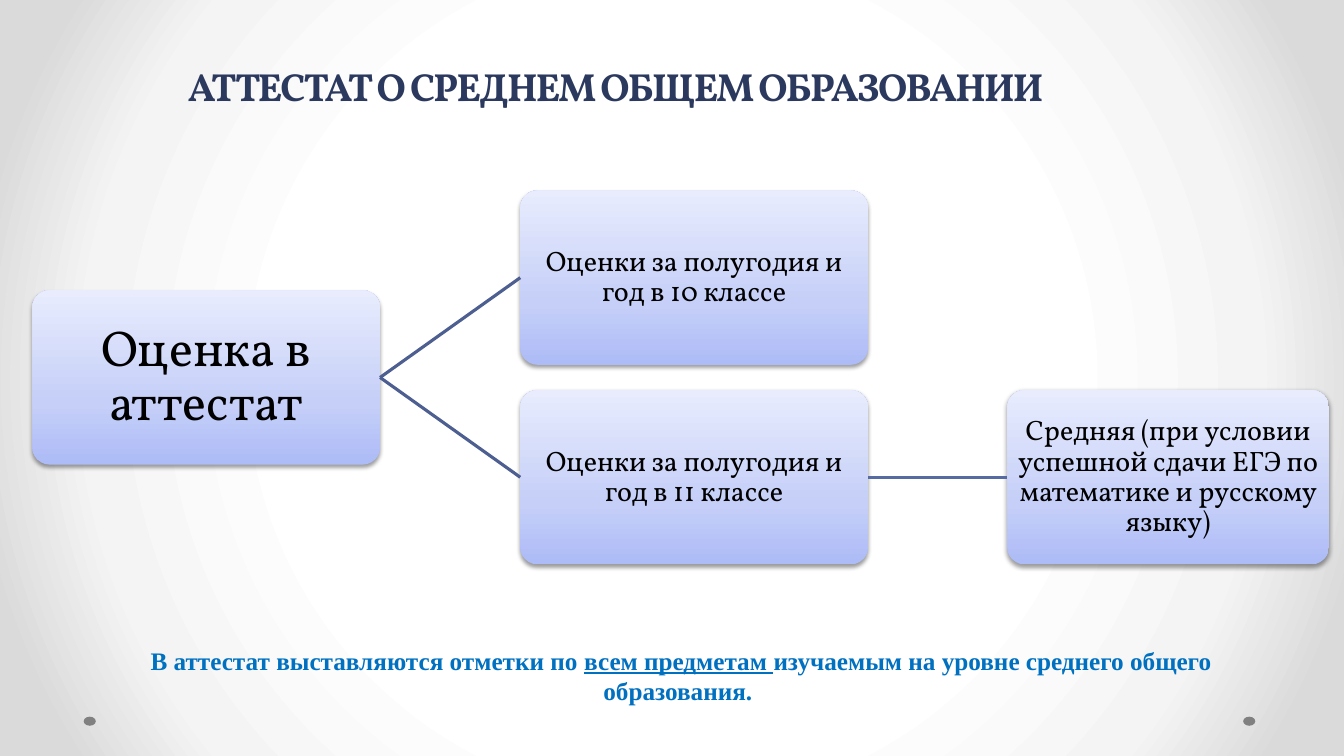
import pptx
import pptx.dml.color
import pptx.enum.shapes
import pptx.enum.text
import pptx.oxml
import pptx.oxml.ns
import pptx.util
from lxml import etree

Inches, Pt = pptx.util.Inches, pptx.util.Pt
RGBColor = pptx.dml.color.RGBColor
MSO_SHAPE = pptx.enum.shapes.MSO_SHAPE
CENTER = pptx.enum.text.PP_ALIGN.CENTER
qn = pptx.oxml.ns.qn

NAVY = RGBColor(0x2C, 0x39, 0x5E)
BLUE = RGBColor(0x00, 0x70, 0xC0)
BLACK = RGBColor(0, 0, 0)
GRAY = RGBColor(0x80, 0x80, 0x80)
BRANCH_LINE = RGBColor(0x4D, 0x5E, 0x90)
RESULT_LINE = RGBColor(0x57, 0x6B, 0xA3)
PAGE_STOPS = [(50, RGBColor(0xFF, 0xFF, 0xFF)), (76, RGBColor(0xF4, 0xF4, 0xF4)),
              (92, RGBColor(0xDA, 0xDA, 0xDA))]
BOX_STOPS = [(0, RGBColor(0xAD, 0xBB, 0xF6)), (35, RGBColor(0xC5, 0xCF, 0xF8)),
             (100, RGBColor(0xE8, 0xEC, 0xFD))]
NS = 'xmlns:a="http://schemas.openxmlformats.org/drawingml/2006/main"'
UPWARD = '<a:lin ang="16200000" scaled="0"/>'
RADIAL = '<a:path path="circle"><a:fillToRect l="50000" t="50000" r="50000" b="50000"/></a:path>'
SHADOW = (f'<a:outerShdw {NS} blurRad="40000" dist="20000" dir="5400000" rotWithShape="0">'
          '<a:srgbClr val="000000"><a:alpha val="38000"/></a:srgbClr></a:outerShdw>')


def set_gradient(fill, owner, stops, direction):
    """Give the fill found inside the owner element these stops and direction."""
    fill.gradient()
    default = next(owner.iter(qn("a:gradFill")))
    marks = "".join(f'<a:gs pos="{pos * 1000}"><a:srgbClr val="{color}"/></a:gs>'
                    for pos, color in stops)
    default.getparent().replace(default, pptx.oxml.parse_xml(
        f'<a:gradFill {NS} rotWithShape="1"><a:gsLst>{marks}</a:gsLst>{direction}</a:gradFill>'))


def style(font, name, size, color, bold=False):
    font.name, font.size, font.bold = name, Pt(size), bold
    font.color.rgb = color


deck = pptx.Presentation()
deck.slide_width, deck.slide_height = Inches(13.33), Inches(7.5)
page = deck.slides.add_slide(deck.slide_layouts[6])
set_gradient(page.background.fill, page.element, PAGE_STOPS, RADIAL)

for left in (0.83, 12.33):
    dot = page.shapes.add_shape(MSO_SHAPE.OVAL, Inches(left), Inches(7.11),
                                Inches(0.12), Inches(0.09))
    dot.shadow.inherit = False
    dot.fill.solid()
    dot.fill.fore_color.rgb = GRAY
    dot.line.fill.background()

# Title
title = page.shapes.add_textbox(Inches(1.04), Inches(0.25), Inches(10.13), Inches(0.88))
title.text_frame.word_wrap = True
title.text_frame.vertical_anchor = pptx.enum.text.MSO_ANCHOR.BOTTOM
para = title.text_frame.paragraphs[0]
para.text = "АТТЕСТАТ О СРЕДНЕМ ОБЩЕМ ОБРАЗОВАНИИ"
para.alignment = CENTER
para.line_spacing = Pt(58)
span = para.runs[0]
style(span.font, "Vollkorn", 28, NAVY, bold=True)
span.font._element.set("spc", "-130")

# Diagram: left, top, width, text size, inset, text
box_rows = [
    (0.32, 2.88, 3.45, 36, 0.03, "Оценка в аттестат"),
    (5.16, 1.89, 3.45, 20, 0.01, "Оценки за полугодия и год в 10 классе"),
    (5.16, 3.87, 3.45, 20, 0.01, "Оценки за полугодия и год в 11 классе"),
    (9.99, 3.87, 3.19, 20, 0.01,
     "Средняя (при условии успешной сдачи ЕГЭ по математике и русскому языку)"),
]
boxes = []
for left, top, width, size, inset, text in box_rows:
    box = page.shapes.add_shape(MSO_SHAPE.ROUNDED_RECTANGLE, Inches(left), Inches(top),
                                Inches(width), Inches(1.73))
    box.adjustments[0] = 0.1
    set_gradient(box.fill, box.element, BOX_STOPS, UPWARD)
    box.line.fill.background()
    box.shadow.inherit = False
    next(box.element.iter(qn("a:effectLst"))).append(pptx.oxml.parse_xml(SHADOW))
    frame = box.text_frame
    frame.margin_left = frame.margin_right = Inches(inset)
    frame.margin_top = frame.margin_bottom = Inches(inset)
    frame.text = text
    para = frame.paragraphs[0]
    para.alignment = CENTER
    para.line_spacing = 0.9
    style(para.runs[0].font, "Vollkorn", size, BLACK)
    boxes.append(box)

grade, year_10, year_11, average = boxes
for start, end, color in [(grade, year_10, BRANCH_LINE), (grade, year_11, BRANCH_LINE),
                          (year_11, average, RESULT_LINE)]:
    link = page.shapes.add_connector(pptx.enum.shapes.MSO_CONNECTOR.STRAIGHT, 0, 0, 0, 0)
    link.begin_connect(start, 3)
    link.end_connect(end, 1)
    link.line.color.rgb = color
    link.line.width = Pt(2.25)
    etree.SubElement(link.element.spPr, qn("a:effectLst"))

# Note under the diagram
note = page.shapes.add_textbox(Inches(1.19), Inches(6.35), Inches(11.13), Inches(0.71))
note.text_frame.word_wrap = True
para = note.text_frame.paragraphs[0]
para.alignment = CENTER
for text, underlined in [("В аттестат выставляются отметки по ", False),
                         ("всем предметам ", True),
                         ("изучаемым на уровне среднего общего образования. ", False)]:
    span = para.add_run()
    span.text = text
    style(span.font, "Times New Roman", 18, BLUE, bold=True)
    span.font.underline = underlined

deck.save("out.pptx")
